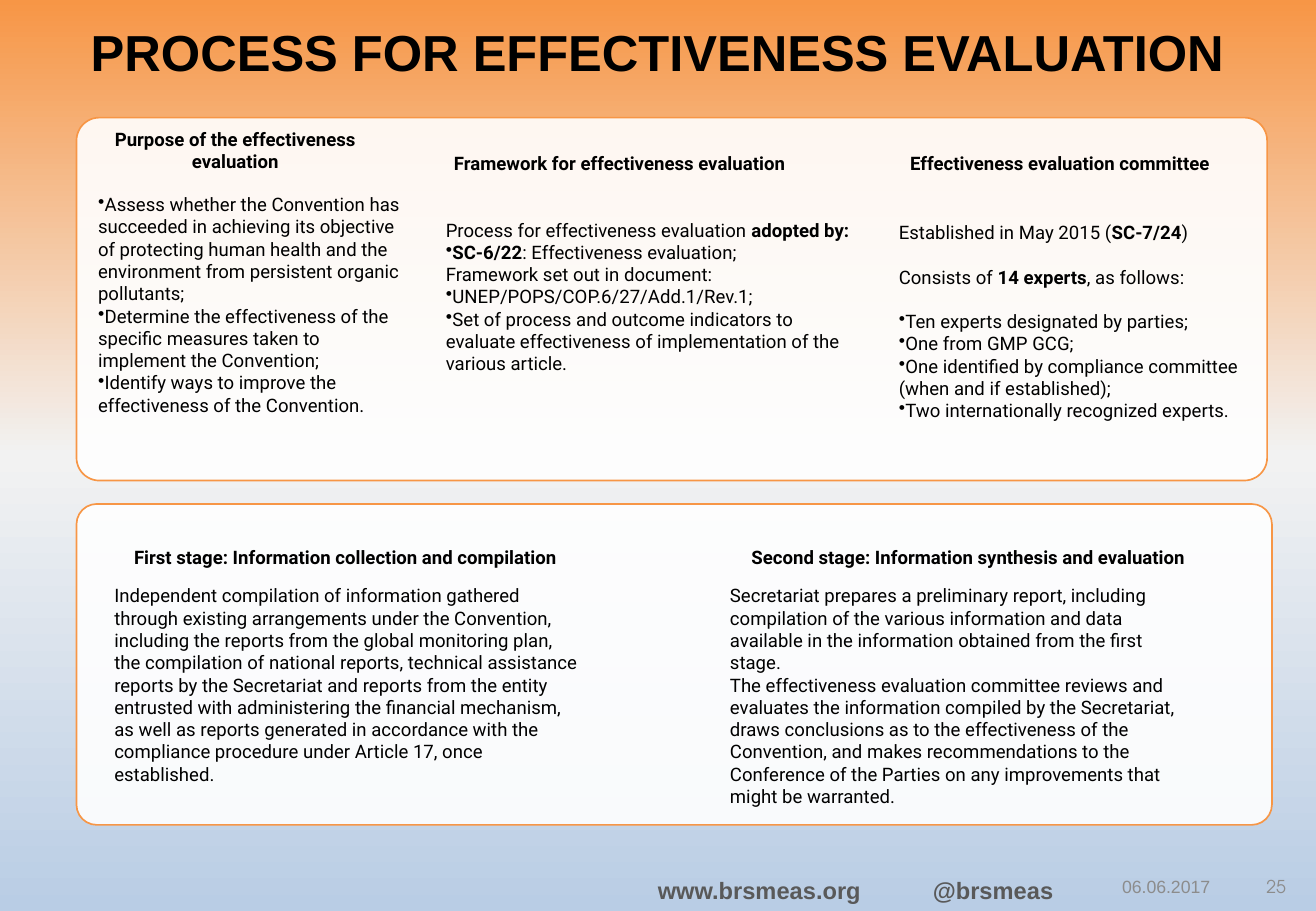
import copy

import lxml.etree
import pptx
import pptx.dml.color
import pptx.enum.shapes
import pptx.enum.text
import pptx.oxml.ns
import pptx.util

Cm = pptx.util.Cm
Pt = pptx.util.Pt
Align = pptx.enum.text.PP_ALIGN
Anchor = pptx.enum.text.MSO_ANCHOR
qn = pptx.oxml.ns.qn

COLORS = {
    "sky": "B9CDE5",
    "mist": "F2F2F2",
    "orange": "F79646",
    "white": "FFFFFF",
    "black": "000000",
    "contact": "595959",
    "footer": "8C8C8C",
}


def rgb(name):
    return pptx.dml.color.RGBColor.from_string(COLORS[name])


class SlideBuilder:
    body_font = "Roboto"
    body_size = 11
    wide_insets = (0.53, 0.28)
    thin_insets = (0.25, 0.13)

    def __init__(self, deck):
        self.page = deck.slides.add_slide(deck.slide_layouts[6])

    def background(self, names):
        fill = self.page.background.fill
        fill.gradient()
        fill.gradient_angle = 90
        stop_list = next(self.page.element.iter(qn("a:gsLst")))
        stop_list.append(copy.deepcopy(stop_list[0]))
        for index, (stop, name) in enumerate(zip(fill.gradient_stops, names)):
            stop.color.rgb = rgb(name)
            stop.position = index / (len(names) - 1)

    def panel(self, left, top, width, height):
        panel = self.page.shapes.add_shape(
            pptx.enum.shapes.MSO_SHAPE.ROUNDED_RECTANGLE,
            Cm(left), Cm(top), Cm(width), Cm(height))
        panel.adjustments[0] = 0.063
        panel.shadow.inherit = False
        panel.fill.solid()
        panel.fill.fore_color.rgb = rgb("white")
        color = panel.fill._xPr.find(qn("a:solidFill"))[0]
        lxml.etree.SubElement(color, qn("a:alpha")).set("val", "90000")
        panel.line.color.rgb = rgb("orange")
        panel.line.width = Pt(1)

    def text(self, place, lines, size=body_size, font=body_font, color="black",
             bold=None, align=Align.LEFT, anchor=Anchor.TOP,
             insets=wide_insets, indent=0, gaps=(), line_spacing=None):
        box = self.page.shapes.add_textbox(*(Cm(value) for value in place))
        frame = box.text_frame
        frame.word_wrap = True
        frame.vertical_anchor = anchor
        frame.margin_left = frame.margin_right = Cm(insets[0])
        frame.margin_top = frame.margin_bottom = Cm(insets[1])
        for index, line in enumerate(lines):
            para = frame.paragraphs[0] if index == 0 else frame.add_paragraph()
            para.alignment = align
            if line_spacing:
                para.line_spacing = line_spacing
            if index in gaps:
                para.space_before = Pt(13.2)
            properties = para._p.get_or_add_pPr()
            properties.set("marL", str(Cm(indent)))
            properties.set("indent", "0")
            if line.startswith("•"):
                bullet = lxml.etree.SubElement(properties, qn("a:buChar"))
                bullet.set("char", "•")
            para.font.name = font
            para.font.size = Pt(size)
            para.font.color.rgb = rgb(color)
            para.font.bold = bold
            for part, words in enumerate(line.lstrip("•").split("**")):
                if words:
                    span = para.add_run()
                    span.text = words
                    if part % 2:
                        span.font.bold = True

    def heading(self, place, words):
        self.text(place, [words], bold=True, align=Align.CENTER,
                  anchor=Anchor.MIDDLE)

    def footer(self, place, words, **style):
        self.text(place, [words], insets=self.thin_insets, **style)


SECTIONS = [
    ("Purpose of the effectiveness evaluation",
     (1.4, 2.26, 7.04, 1.75), (1.52, 3.76, 7.47, 6.6), {},
     ["•Assess whether the Convention has succeeded in achieving its objective "
      "of protecting human health and the environment from persistent organic "
      "pollutants;",
      "•Determine the effectiveness of the specific measures taken to implement "
      "the Convention;",
      "•Identify ways to improve the effectiveness of the Convention."]),
    ("Framework for effectiveness evaluation",
     (8.74, 2.54, 8.43, 1.75), (8.79, 4.29, 9.8, 6.6), {},
     ["Process for effectiveness evaluation **adopted by:**",
      "•**SC-6/22**: Effectiveness evaluation;",
      "Framework set out in document:",
      "•UNEP/POPS/COP.6/27/Add.1/Rev.1;",
      "•Set of process and outcome indicators to evaluate effectiveness of "
      "implementation of the various article."]),
    ("Effectiveness evaluation committee",
     (17.55, 2.54, 9.22, 1.75), (18.26, 4.34, 8.92, 6.6), {"gaps": (1, 2)},
     ["Established in May 2015 (**SC-7/24**)",
      "Consists of **14 experts**, as follows:",
      "•Ten experts designated by parties;",
      "•One from GMP GCG;",
      "•One identified by compliance committee (when and if established);",
      "•Two internationally recognized experts."]),
    ("First stage: Information collection and compilation",
     (0.76, 10.06, 12.93, 3.18), (1.35, 11.94, 11.3, 7), {"indent": 0.51},
     ["Independent compilation of information gathered through existing "
      "arrangements under the Convention, including the reports from the global "
      "monitoring plan, the compilation of national reports, technical "
      "assistance reports by the Secretariat and reports from the entity "
      "entrusted with administering the financial mechanism, as well as reports "
      "generated in accordance with the compliance procedure under Article 17, "
      "once established."]),
    ("Second stage: Information synthesis and evaluation",
     (13.97, 10.06, 12.55, 3.18), (14.22, 11.94, 11.25, 7), {"indent": 0.51},
     ["Secretariat prepares a preliminary report, including compilation of the "
      "various information and data available in the information obtained from "
      "the first stage.",
      "The effectiveness evaluation committee reviews and evaluates the "
      "information compiled by the Secretariat, draws conclusions as to the "
      "effectiveness of the Convention, and makes recommendations to the "
      "Conference of the Parties on any improvements that might be warranted."]),
]


def main():
    deck = pptx.Presentation()
    deck.slide_width = Cm(27.51)
    deck.slide_height = Cm(19.05)
    slide = SlideBuilder(deck)
    slide.background(["sky", "mist", "orange"])

    stamp = {"size": 10.5, "color": "footer", "align": Align.RIGHT,
             "anchor": Anchor.MIDDLE}
    slide.footer((21.03, 18.03, 4.52, 1.02), "06.06.2017", font="Arial", **stamp)
    slide.footer((25.68, 18.03, 1.45, 1.02), "25",
                 font="TeX Gyre Adventor", **stamp)
    contact = {"size": 14, "font": "Arial", "color": "contact", "bold": True}
    slide.footer((12.37, 18.19, 7.01, 0.86), "www.brsmeas.org",
                 align=Align.CENTER, **contact)
    slide.footer((19.25, 18.19, 3.61, 0.86), "@brsmeas", **contact)

    slide.text((1.55, 0.48, 24.41, 1.37),
               ["PROCESS FOR EFFECTIVENESS EVALUATION"], size=30, font="Arial",
               bold=True, align=Align.CENTER, anchor=Anchor.BOTTOM,
               insets=slide.thin_insets, line_spacing=0.9)
    slide.panel(1.6, 2.46, 24.89, 7.59)
    slide.panel(1.6, 10.54, 24.99, 6.71)
    for title, title_place, body_place, style, lines in SECTIONS:
        slide.heading(title_place, title)
        slide.text(body_place, lines, **style)
    deck.save("out.pptx")


if __name__ == "__main__":
    main()
